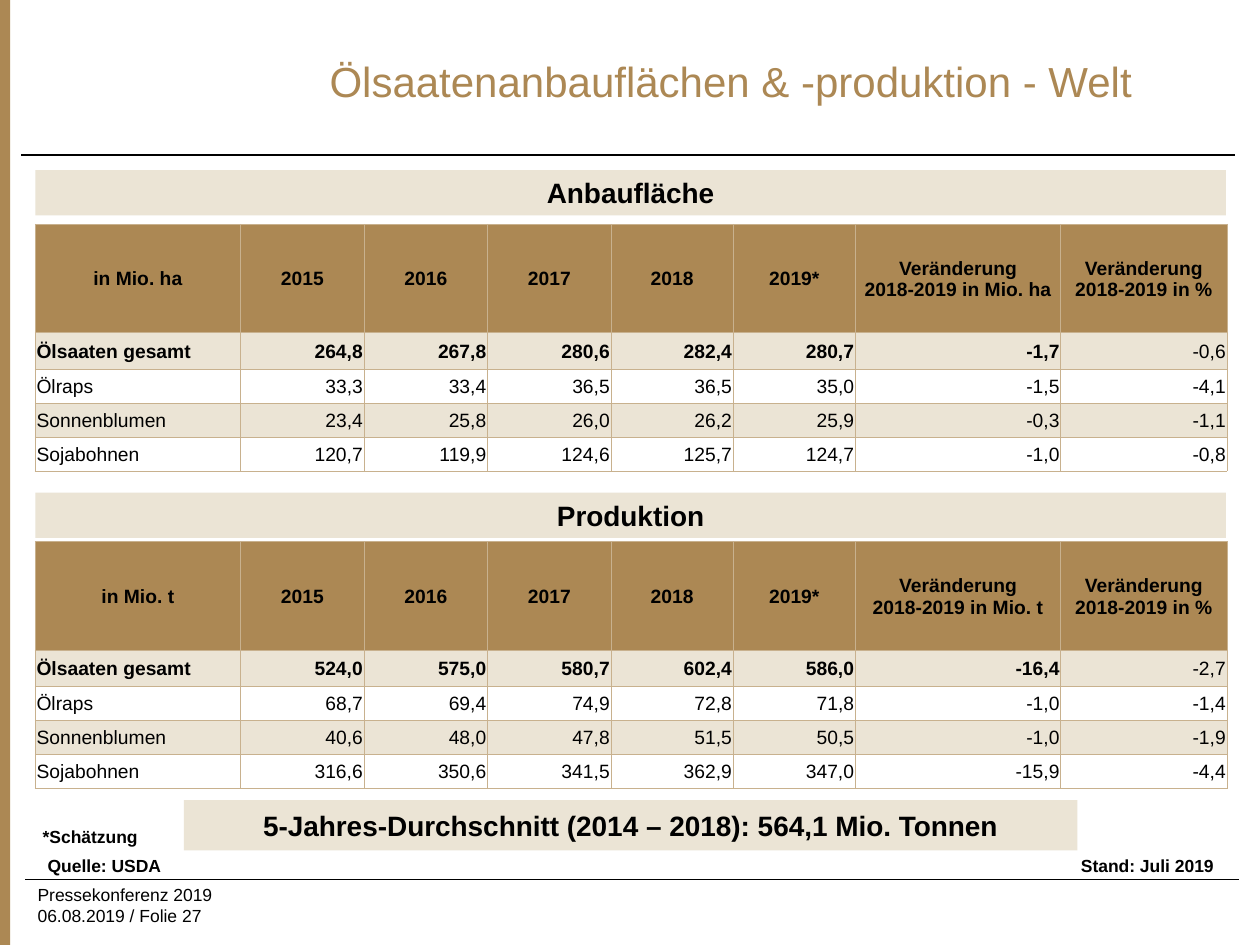
from dataclasses import dataclass

from lxml.etree import SubElement
from pptx import Presentation
from pptx.dml.color import RGBColor
from pptx.enum.shapes import MSO_CONNECTOR, MSO_SHAPE
from pptx.enum.text import MSO_ANCHOR, PP_ALIGN
from pptx.oxml import parse_xml
from pptx.oxml.ns import nsdecls, qn
from pptx.util import Inches, Pt


@dataclass(frozen=True)
class Theme:
    font: str = "Arial"
    brown: str = "AC8854"
    sand: str = "EBE4D5"
    border: str = "C8B18E"
    black: str = "000000"
    title: int = 24
    heading: int = 16
    table: int = 11
    note: int = 10


theme = Theme()
presentation = Presentation()
presentation.slide_width, presentation.slide_height = Inches(10), Inches(7.5)
slide = presentation.slides.add_slide(presentation.slide_layouts[5])

# Grid: 100 columns by 75 rows
column = presentation.slide_width / 100
row = presentation.slide_height / 75


def area(left, top, width, height):
    return [int(left * column), int(top * row), int(width * column), int(height * row)]


def write(text_frame, text, size, align=PP_ALIGN.LEFT, bold=False, color=theme.black):
    text_frame.text = text
    text_frame.word_wrap = True
    for paragraph in text_frame.paragraphs:
        paragraph.alignment = align
        for run in paragraph.runs:
            run.font.name = theme.font
            run.font.size = Pt(size)
            run.font.bold = bold
            run.font.color.rgb = RGBColor.from_string(color)


# Title
title = slide.shapes.title
title.left, title.top, title.width, title.height = area(18.5, 1.3, 79, 10.2)
write(title.text_frame, "Ölsaatenanbauflächen & -produktion - Welt", theme.title,
      PP_ALIGN.CENTER, color=theme.brown)
title.text_frame.vertical_anchor = MSO_ANCHOR.MIDDLE

# Side stripe and heading bands
bands = [
    ("", theme.brown, (-0.1, 0, 0.9, 75)),
    ("Anbaufläche", theme.sand, (2.8, 13.5, 94.5, 3.6)),
    ("Produktion", theme.sand, (2.8, 39.1, 94.5, 3.6)),
    ("5-Jahres-Durchschnitt (2014 – 2018): 564,1 Mio. Tonnen", theme.sand,
     (14.6, 63.5, 70.9, 4)),
]
for text, color, position in bands:
    band = slide.shapes.add_shape(MSO_SHAPE.RECTANGLE, *area(*position))
    band.shadow.inherit = False
    band.fill.solid()
    band.fill.fore_color.rgb = RGBColor.from_string(color)
    band.line.fill.background()
    if text:
        write(band.text_frame, text, theme.heading, PP_ALIGN.CENTER, bold=True)
        band.text_frame.vertical_anchor = MSO_ANCHOR.MIDDLE

# Rules below the title and above the footer
for left, top in [(1.7, 12.3), (2, 69.8)]:
    x, y, length, _ = area(left, top, 96.3, 0)
    rule = slide.shapes.add_connector(MSO_CONNECTOR.STRAIGHT, x, y, x + length, y)
    rule.line.color.rgb = RGBColor.from_string(theme.black)
    rule.line.width = Pt(0.75)
    SubElement(rule._element.spPr, qn("a:effectLst"))

# Notes and footer
notes = [
    ("*Schätzung", (2.4, 65.1, 94.5, 2.4), PP_ALIGN.LEFT, True),
    ("Quelle: USDA", (2.8, 67.4, 94.5, 2.4), PP_ALIGN.LEFT, True),
    ("Stand: Juli 2019", (2.8, 67.4, 94.5, 2.7), PP_ALIGN.RIGHT, True),
    ("Pressekonferenz 2019\v06.08.2019 / Folie 27", (2, 69.7, 33.1, 4),
     PP_ALIGN.LEFT, False),
]
for text, position, align, bold in notes:
    note = slide.shapes.add_textbox(*area(*position))
    write(note.text_frame, text, theme.note, align, bold)

# Tables
years = ["2015", "2016", "2017", "2018", "2019*"]
crops = ["Ölsaaten gesamt", "Ölraps", "Sonnenblumen", "Sojabohnen"]
column_widths = [16.3, 9.8, 9.8, 9.8, 9.7, 9.7, 16.3, 13.2]
row_heights = [8.6, 2.9, 2.7, 2.7, 2.7]
tables = [
    (17.8, "Mio. ha", [
        ["264,8", "267,8", "280,6", "282,4", "280,7", "-1,7", "-0,6"],
        ["33,3", "33,4", "36,5", "36,5", "35,0", "-1,5", "-4,1"],
        ["23,4", "25,8", "26,0", "26,2", "25,9", "-0,3", "-1,1"],
        ["120,7", "119,9", "124,6", "125,7", "124,7", "-1,0", "-0,8"],
    ]),
    (43, "Mio. t", [
        ["524,0", "575,0", "580,7", "602,4", "586,0", "-16,4", "-2,7"],
        ["68,7", "69,4", "74,9", "72,8", "71,8", "-1,0", "-1,4"],
        ["40,6", "48,0", "47,8", "51,5", "50,5", "-1,0", "-1,9"],
        ["316,6", "350,6", "341,5", "362,9", "347,0", "-15,9", "-4,4"],
    ]),
]
for top, unit, values in tables:
    header = [f"in {unit}", *years, f"Veränderung\n2018-2019 in {unit}",
              "Veränderung 2018-2019 in %"]
    rows = [header] + [[crop, *numbers] for crop, numbers in zip(crops, values)]
    position = area(2.8, top, sum(column_widths), sum(row_heights))
    table = slide.shapes.add_table(len(rows), len(header), *position).table
    table.first_row = table.horz_banding = False
    for table_column, width in zip(table.columns, column_widths):
        table_column.width = int(width * column)
    for table_row, height in zip(table.rows, row_heights):
        table_row.height = int(height * row)

    for row_index, texts in enumerate(rows):
        for column_index, text in enumerate(texts):
            cell = table.cell(row_index, column_index)
            cell.margin_left = cell.margin_right = cell.margin_top = Inches(0.01)
            cell.margin_bottom = 0
            cell.vertical_anchor = MSO_ANCHOR.MIDDLE
            if row_index == 0:
                align = PP_ALIGN.CENTER
            else:
                align = PP_ALIGN.RIGHT if column_index else PP_ALIGN.LEFT
            is_last = column_index == len(header) - 1
            bold = row_index == 0 or (row_index == 1 and not is_last)
            write(cell.text_frame, text, theme.table, align, bold)

            # Brown header, then sand on every other row
            if row_index == 0 or row_index % 2:
                cell.fill.solid()
                color = theme.sand if row_index else theme.brown
                cell.fill.fore_color.rgb = RGBColor.from_string(color)
            else:
                cell.fill.background()

            # Borders come before the fill in the cell properties
            for index, side in enumerate(["lnL", "lnR", "lnT", "lnB"]):
                cell._tc.tcPr.insert(index, parse_xml(
                    f'<a:{side} {nsdecls("a")} w="{Pt(0.5)}"><a:solidFill>'
                    f'<a:srgbClr val="{theme.border}"/></a:solidFill></a:{side}>'))

presentation.save("out.pptx")
